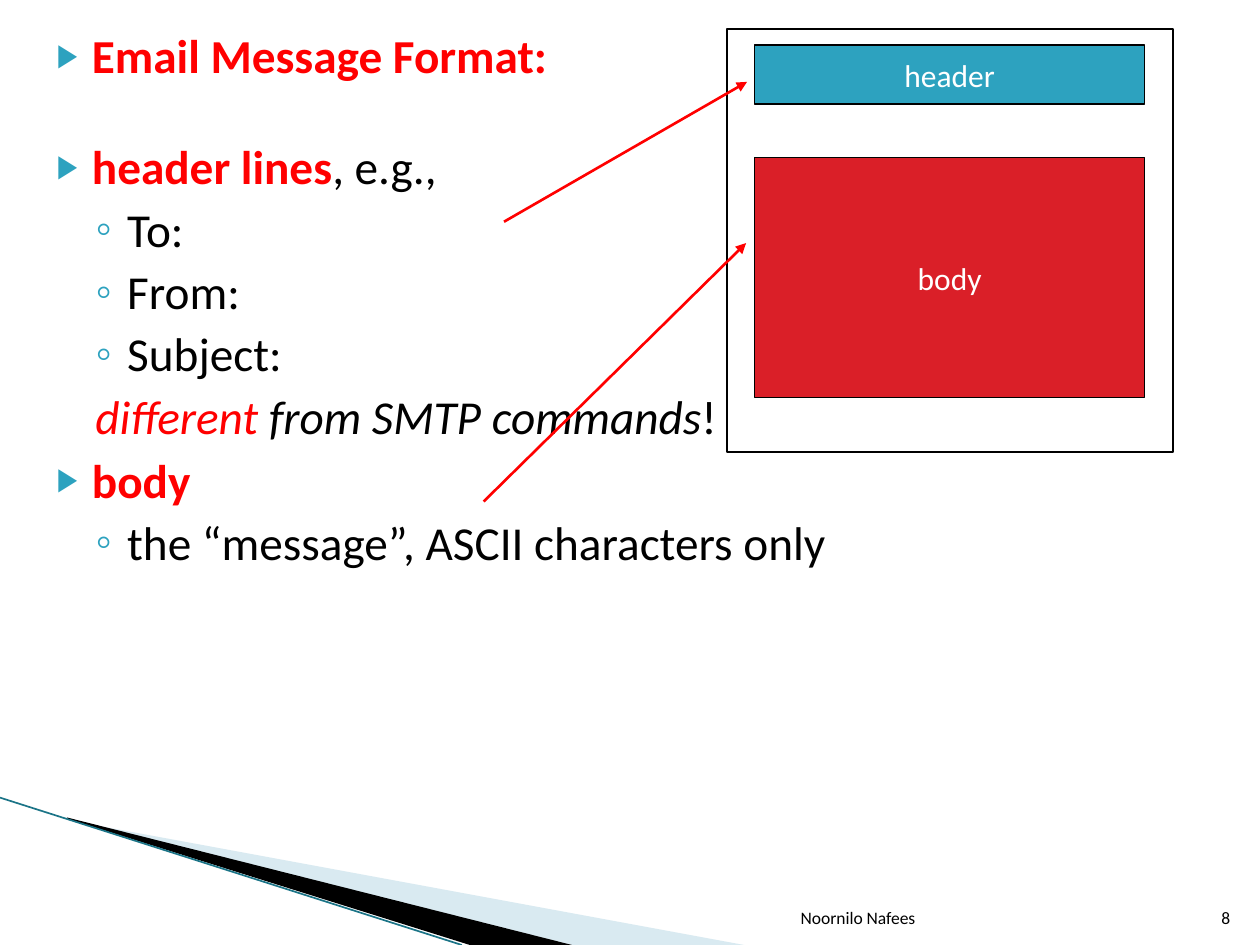
from lxml.etree import SubElement
from pptx import Presentation
from pptx.dml.color import RGBColor
from pptx.enum.shapes import MSO_CONNECTOR, MSO_SHAPE
from pptx.enum.text import MSO_ANCHOR, MSO_AUTO_SIZE, PP_ALIGN
from pptx.oxml.ns import qn
from pptx.util import Cm, Pt

FONT = "Calibri"
COLORS = {
    "teal": "2DA2BF", "red": "FF0000", "crimson": "DA1F28", "black": "000000",
    "white": "FFFFFF", "pale": "A0CBDC", "edge": "1B7487",
}
LEVELS = [
    {"margin": 1.02, "indent": -0.71, "before": 4, "bullet": "▶", "size": 68},
    {"margin": 1.73, "indent": -0.64, "before": 3.2, "bullet": "◦", "size": 100},
]
SECTION_GAP = 31
OUTLINE = [
    (0, True, [("Email Message Format:", "red", "bold")]),
    (0, True, [("header lines", "red", "bold"), (", e.g.,", "black", "")]),
    (1, True, [("To:", "black", "")]),
    (1, True, [("From:", "black", "")]),
    (1, True, [("Subject:", "black", "")]),
    (1, False, [("different ", "red", "italic"),
                ("from SMTP commands", "black", "italic"), ("!", "black", "")]),
    (0, True, [("body", "red", "bold")]),
    (1, True, [("the “message”, ASCII characters only", "black", "")]),
]
WEDGES = [
    ("pale", 40, [(1.4, 16.54), (15, 19.05), (11.53, 19.05), (1.4, 16.51)]),
    ("black", 100, [(1.35, 16.48), (11.53, 19.05), (9.47, 19.05), (1.37, 16.51)]),
]
WEDGE_EDGE = ((0, 16.08), (9.31, 19.05))
FOOTERS = [
    ("Noornilo Nafees", (12.17, 17.81, 6.53, 1.02)),
    ("8", (24.03, 17.81, 1.02, 1.02)),
]
MESSAGE_BOXES = [
    ("header", "teal", 0.75, (15.21, 0.91, 7.87, 1.19)),
    ("body", "crimson", 0.75, (15.21, 3.18, 7.87, 4.83)),
    ("", None, 1, (14.66, 0.58, 8.99, 8.53)),
]
ARROWS = [((10.16, 4.47), (15.06, 1.65)), ((9.75, 10.11), (15.04, 4.9))]


def color(name):
    return RGBColor.from_string(COLORS[name])


def lengths(values):
    return [Cm(value) for value in values]


def format_font(font, size, color_name):
    font.name = FONT
    font.size = Pt(size)
    font.color.rgb = color(color_name)


def add_wedge(slide, color_name, opacity, points):
    corners = [tuple(lengths(point)) for point in points]
    builder = slide.shapes.build_freeform(*corners[0], scale=1.0)
    builder.add_line_segments(corners[1:], close=True)
    shape = builder.convert_to_shape()
    shape.shadow.inherit = False
    shape.fill.solid()
    shape.fill.fore_color.rgb = color(color_name)
    shape.line.fill.background()
    if opacity < 100:
        fill_color = shape.fill._xPr.find(qn("a:solidFill"))[0]
        SubElement(fill_color, qn("a:alpha"), val=str(opacity * 1000))


def add_line(slide, start, end, color_name, width, arrow=False):
    connector = slide.shapes.add_connector(
        MSO_CONNECTOR.STRAIGHT, *lengths(start + end))
    connector.line.color.rgb = color(color_name)
    connector.line.width = Pt(width)
    if arrow:
        SubElement(connector.line._get_or_add_ln(), qn("a:tailEnd"), type="triangle")
    SubElement(connector._element.spPr, qn("a:effectLst"))


def format_bullet(paragraph, level, has_bullet):
    properties = paragraph._p.get_or_add_pPr()
    properties.set("marL", str(Cm(level["margin"])))
    properties.set("indent", str(Cm(level["indent"])))
    if not has_bullet:
        SubElement(properties, qn("a:buNone"))
        return
    bullet_color = SubElement(properties, qn("a:buClr"))
    SubElement(bullet_color, qn("a:srgbClr"), val=COLORS["teal"])
    SubElement(properties, qn("a:buSzPct"), val=str(level["size"] * 1000))
    SubElement(properties, qn("a:buChar"), char=level["bullet"])


def fill_outline(placeholder):
    placeholder.left, placeholder.top, placeholder.width, placeholder.height = lengths(
        (0.58, 0.41, 24.21, 18.64))
    text_frame = placeholder.text_frame
    text_frame.auto_size = MSO_AUTO_SIZE.NONE
    text_frame.vertical_anchor = MSO_ANCHOR.TOP
    for index, (depth, has_bullet, parts) in enumerate(OUTLINE):
        paragraph = text_frame.add_paragraph() if index else text_frame.paragraphs[0]
        level = LEVELS[depth]
        paragraph.level = depth
        format_bullet(paragraph, level, has_bullet)
        before = {0: 0, 1: SECTION_GAP}.get(index, level["before"])
        paragraph.space_before = Pt(before)
        for text, color_name, style in parts:
            run = paragraph.add_run()
            run.text = text
            format_font(run.font, 27, color_name)
            run.font.bold = style == "bold"
            run.font.italic = style == "italic"


def add_footer(slide, text, box):
    text_frame = slide.shapes.add_textbox(*lengths(box)).text_frame
    text_frame.word_wrap = True
    text_frame.vertical_anchor = MSO_ANCHOR.BOTTOM
    text_frame.text = text
    paragraph = text_frame.paragraphs[0]
    paragraph.alignment = PP_ALIGN.RIGHT
    format_font(paragraph.runs[0].font, 10, "black")


def add_message_box(slide, text, fill_name, line_width, box):
    shape = slide.shapes.add_shape(MSO_SHAPE.RECTANGLE, *lengths(box))
    shape.shadow.inherit = False
    shape.line.color.rgb = color("black")
    shape.line.width = Pt(line_width)
    if fill_name is None:
        shape.fill.background()
        return
    shape.fill.solid()
    shape.fill.fore_color.rgb = color(fill_name)
    text_frame = shape.text_frame
    text_frame.word_wrap = False
    text_frame.vertical_anchor = MSO_ANCHOR.MIDDLE
    text_frame.text = text
    paragraph = text_frame.paragraphs[0]
    paragraph.alignment = PP_ALIGN.CENTER
    format_font(paragraph.runs[0].font, 18, "white")


def main():
    presentation = Presentation()
    presentation.slide_width = Cm(25.4)
    presentation.slide_height = Cm(19.05)
    slide = presentation.slides.add_slide(presentation.slide_layouts[1])
    title = slide.shapes.title._element
    title.getparent().remove(title)
    for wedge in WEDGES:
        add_wedge(slide, *wedge)
    add_line(slide, *WEDGE_EDGE, "edge", 0.95)
    outline = slide.placeholders[1]
    fill_outline(outline)
    for footer in FOOTERS:
        add_footer(slide, *footer)
    for message_box in MESSAGE_BOXES:
        add_message_box(slide, *message_box)
    for start, end in ARROWS:
        add_line(slide, start, end, "red", 1.5, arrow=True)
    presentation.save("out.pptx")


if __name__ == "__main__":
    main()
